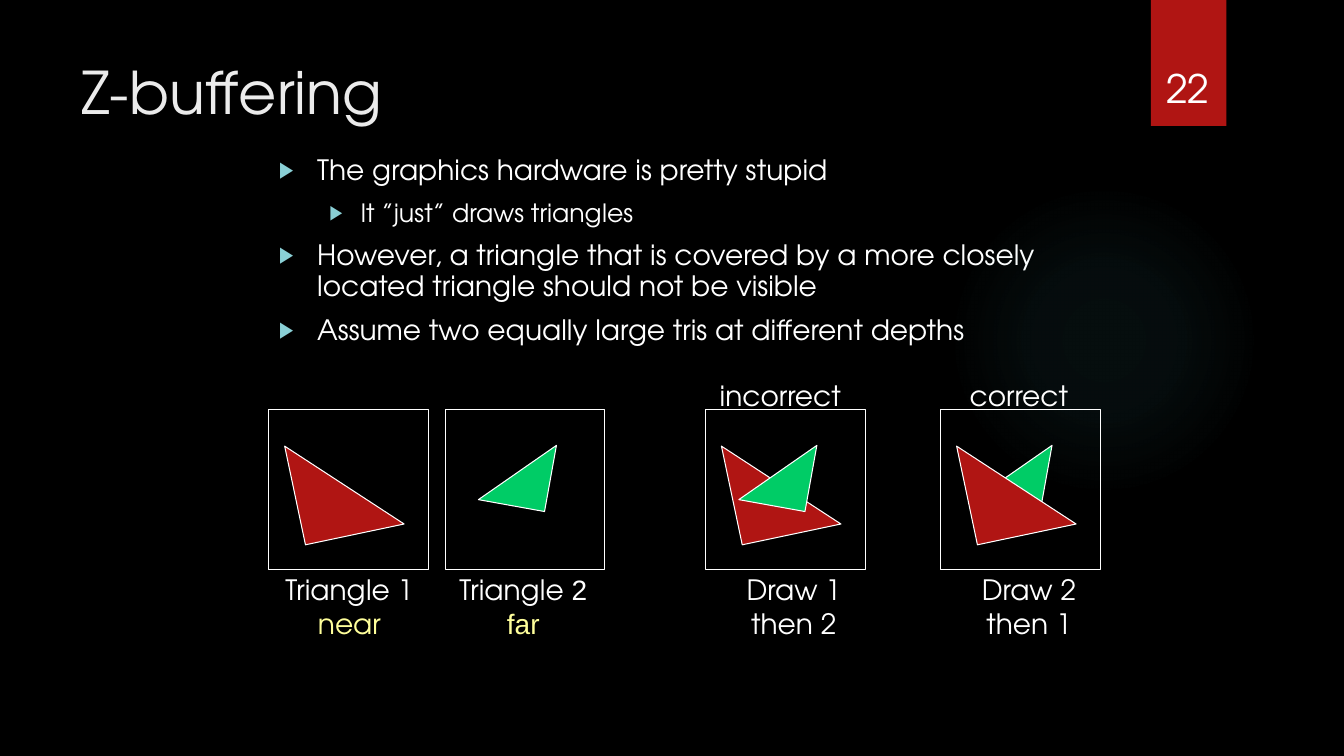
from lxml import etree
from pptx import Presentation
from pptx import util as u
from pptx.dml.color import RGBColor
from pptx.enum import shapes, text
from pptx.oxml.ns import qn

COLS, ROWS = 160, 90  # square grid cells, 1/12 inch each
WIDTH, HEIGHT = u.Inches(13.333), u.Inches(7.5)
FONT = "TeX Gyre Adventor"
COLORS = {
    "background": "000000", "text": "FFFFFF", "title": "EBEBEB", "depth": "FFFF9B",
    "bullet": "8AD0D6", "near": "B01513", "far": "00CC66", "glow": "50B9C1",
}
FRAME_TOP, FRAME_SIZE = 48.75, 19
# Offset in the frame, size in cells and rotation of each triangle
TRIANGLES = {"near": (3, 3, 12, 348.1), "far": (4.6, 3.5, 8, 280.2)}


def color(name):
    return RGBColor.from_string(COLORS[name])


def grid(left, top, width, height):
    """Turn grid cells into a left, top, width, height box in EMU."""
    return (int(left * WIDTH / COLS), int(top * HEIGHT / ROWS),
            int(width * WIDTH / COLS), int(height * HEIGHT / ROWS))


def place(placeholder, box):
    placeholder.left, placeholder.top, placeholder.width, placeholder.height = box


def write(paragraph, words, size=20, fill="text", font=FONT, align=None):
    run = paragraph.add_run()
    run.text = words
    run.font.size = u.Pt(size)
    run.font.name = font
    run.font.color.rgb = color(fill)
    if align is not None:
        paragraph.alignment = align


def add_label(slide, box, lines, anchor=text.MSO_ANCHOR.TOP, size=20):
    """Add centred lines, each a list of (words, format) runs."""
    frame = slide.shapes.add_textbox(*grid(*box)).text_frame
    frame.word_wrap = False
    frame.vertical_anchor = anchor
    for number, runs in enumerate(lines):
        paragraph = frame.add_paragraph() if number else frame.paragraphs[0]
        for words, style in runs:
            write(paragraph, words, size=size, align=text.PP_ALIGN.CENTER, **style)


def add_figure(slide, kind, box, fill=None, outlined=True, rotation=0):
    figure = slide.shapes.add_shape(kind, *grid(*box))
    figure.shadow.inherit = False
    figure.rotation = rotation
    if fill:
        figure.fill.solid()
        figure.fill.fore_color.rgb = color(fill)
    else:
        figure.fill.background()
    if outlined:
        figure.line.color.rgb = color("text")
        figure.line.width = u.Pt(0.75)
    else:
        figure.line.fill.background()
    return figure


def add_glow(slide):
    glow = add_figure(slide, shapes.MSO_SHAPE.OVAL, (112.9, 22, 37, 37), outlined=False)
    properties = glow.fill._xPr
    gradient = etree.Element(qn("a:gradFill"), rotWithShape="1")
    stops = etree.SubElement(gradient, qn("a:gsLst"))
    for position, alpha in ((0, 7), (36, 6), (69, 0)):
        stop = etree.SubElement(stops, qn("a:gs"), pos=str(position * 1000))
        tint = etree.SubElement(stop, qn("a:srgbClr"), val=COLORS["glow"])
        etree.SubElement(tint, qn("a:alpha"), val=str(alpha * 1000))
    circle = etree.SubElement(gradient, qn("a:path"), path="circle")
    etree.SubElement(circle, qn("a:fillToRect"), l="50000", t="50000", r="50000", b="50000")
    properties.replace(properties.find(qn("a:noFill")), gradient)


def add_bullet(paragraph, indent, hanging):
    properties = paragraph._p.get_or_add_pPr()
    properties.set("marL", str(u.Inches(indent)))
    properties.set("indent", str(-u.Inches(hanging)))
    tint = etree.SubElement(properties, qn("a:buClr"))
    etree.SubElement(tint, qn("a:srgbClr"), val=COLORS["bullet"])
    etree.SubElement(properties, qn("a:buSzPct"), val="80000")
    etree.SubElement(properties, qn("a:buFont"), typeface="Arial")
    etree.SubElement(properties, qn("a:buChar"), char="▶")


def fill_title(title, words):
    place(title, grid(8.5, 6, 123.5, 18.4))
    title.text_frame.vertical_anchor = text.MSO_ANCHOR.TOP
    title.text_frame.auto_size = text.MSO_AUTO_SIZE.NONE
    write(title.text_frame.paragraphs[0], words, size=42, fill="title",
          align=text.PP_ALIGN.LEFT)


def fill_body(body, points):
    place(body, grid(32, 18, 105, 47))
    frame = body.text_frame
    frame.auto_size = text.MSO_AUTO_SIZE.NONE
    for number, (level, words) in enumerate(points):
        paragraph = frame.add_paragraph() if number else frame.paragraphs[0]
        paragraph.level = level
        paragraph.line_spacing = 0.9
        paragraph.space_before = u.Pt(10 if number else 0)
        add_bullet(paragraph, *((0.81, 0.31) if level else (0.38, 0.38)))
        write(paragraph, words, size=18 if level else 20)


def add_panel(slide, left, draw_order, caption, caption_shift, verdict=None, verdict_shift=0):
    """Add a frame with triangles in drawing order, a caption below and a verdict above."""
    add_figure(slide, shapes.MSO_SHAPE.RECTANGLE, (left, FRAME_TOP, FRAME_SIZE, FRAME_SIZE))
    for depth in draw_order:
        across, down, size, rotation = TRIANGLES[depth]
        add_figure(slide, shapes.MSO_SHAPE.RIGHT_TRIANGLE,
                   (left + across, FRAME_TOP + down, size, size), depth, rotation=rotation)
    add_label(slide, (left + caption_shift, 67.6, FRAME_SIZE, 5.25 * len(caption)), caption)
    if verdict:
        add_label(slide, (left + verdict_shift, 44.45, FRAME_SIZE, 5.25), [[(verdict, {})]])


def main():
    deck = Presentation()
    deck.slide_width, deck.slide_height = WIDTH, HEIGHT
    slide = deck.slides.add_slide(deck.slide_layouts[1])
    slide.background.fill.solid()
    slide.background.fill.fore_color.rgb = color("background")

    add_glow(slide)
    add_figure(slide, shapes.MSO_SHAPE.RECTANGLE, (137, 0, 9, 15), "near", outlined=False)
    add_label(slide, (135.9, 3.8, 11, 10.1), [[("22", {})]], text.MSO_ANCHOR.BOTTOM, size=28)
    fill_title(slide.shapes.title, "Z-buffering")
    fill_body(slide.placeholders[1], [
        (0, "The graphics hardware is pretty stupid"),
        (1, "It ”just” draws triangles"),
        (0, "However, a triangle that is covered by a more closely located triangle "
            "should not be visible"),
        (0, "Assume two equally large tris at different depths"),
    ])

    add_panel(slide, 32, ["near"],
              [[("Triangle 1", {})], [("near", {"fill": "depth"})]], 0.1)
    add_panel(slide, 53, ["far"],
              [[("Triangle ", {}), ("2", {"font": "Arial"})],
               [("far", {"fill": "depth", "font": "Arial"})]], -0.2)
    add_panel(slide, 84, ["near", "far"], [[("Draw 1 then 2", {})]], 1, "incorrect", -0.6)
    add_panel(slide, 112, ["far", "near"], [[("Draw 2 then 1", {})]], 1, "correct", -0.2)
    deck.save("out.pptx")


if __name__ == "__main__":
    main()
